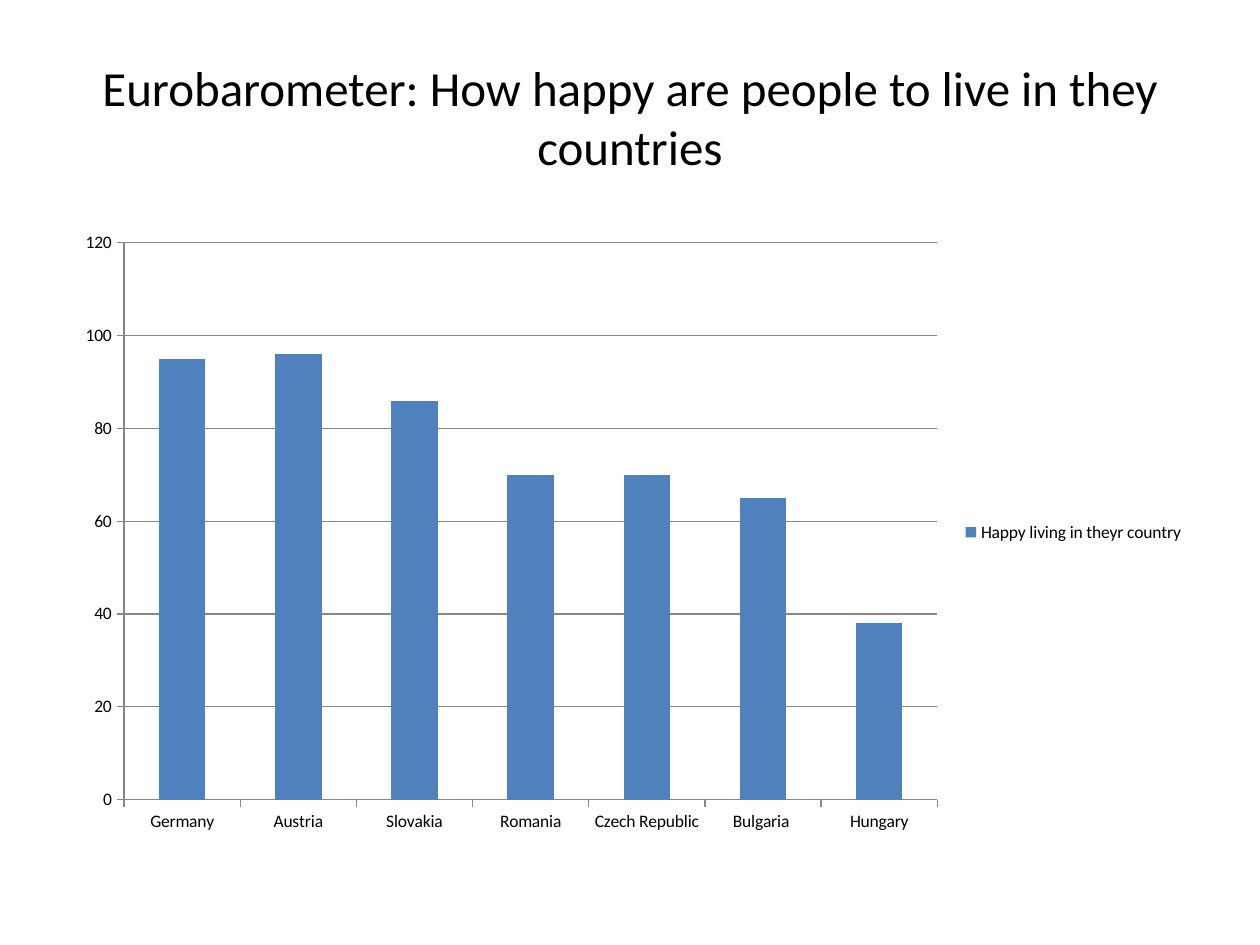
from pptx import Presentation
from pptx.chart.data import CategoryChartData
from pptx.dml.color import RGBColor
from pptx.enum.chart import XL_CHART_TYPE, XL_LEGEND_POSITION, XL_TICK_MARK
from pptx.enum.text import MSO_ANCHOR, MSO_AUTO_SIZE, PP_ALIGN
from pptx.util import Pt

COLUMNS = XL_CHART_TYPE.COLUMN_CLUSTERED
LEGEND_RIGHT = XL_LEGEND_POSITION.RIGHT
TICK_OUTSIDE = XL_TICK_MARK.OUTSIDE
MIDDLE = MSO_ANCHOR.MIDDLE
NO_AUTOFIT = MSO_AUTO_SIZE.NONE
CENTER = PP_ALIGN.CENTER

FONT = "Calibri"
BLACK = "000000"
GRAY = "878787"
BLUE = "4F81BD"
TITLE_ONLY = 5
LEFT, WIDTH = 36, 648

TITLE = "Eurobarometer: How happy are people to live in they countries"
SERIES_NAME = "Happy living in theyr country"
HAPPINESS = {
    "Germany": 95,
    "Austria": 96,
    "Slovakia": 86,
    "Romania": 70,
    "Czech Republic": 70,
    "Bulgaria ": 65,
    "Hungary": 38,
}


def color(hex_string):
    """Return the colour for a hex string."""
    return RGBColor.from_string(hex_string)


def format_font(font, size):
    """Set the slide's typeface and text colour at the given size."""
    font.name = FONT
    font.size = Pt(size)
    font.bold = False
    font.color.rgb = color(BLACK)


def format_line(line):
    """Make a chart line thin and gray."""
    line.color.rgb = color(GRAY)
    line.width = Pt(0.75)


def set_title(slide, text, top, height):
    """Place and format the title placeholder."""
    title = slide.shapes.title
    title.left, title.top = Pt(LEFT), Pt(top)
    title.width, title.height = Pt(WIDTH), Pt(height)
    frame = title.text_frame
    frame.text = text
    frame.word_wrap = True
    frame.auto_size = NO_AUTOFIT
    frame.vertical_anchor = MIDDLE
    paragraph = frame.paragraphs[0]
    paragraph.alignment = CENTER
    format_font(paragraph.font, 28)


def format_axis(axis, has_gridlines):
    """Style an axis with outside ticks and optional gridlines."""
    axis.major_tick_mark = TICK_OUTSIDE
    axis.has_major_gridlines = has_gridlines
    format_line(axis.format.line)
    if has_gridlines:
        format_line(axis.major_gridlines.format.line)


def add_column_chart(slide, name, values, top, height):
    """Add a single-series column chart with a legend on the right."""
    data = CategoryChartData()
    data.categories = list(values)
    data.add_series(name, list(values.values()))
    chart = slide.shapes.add_chart(
        COLUMNS, Pt(LEFT), Pt(top), Pt(WIDTH), Pt(height), data
    ).chart
    format_font(chart.font, 10)
    chart.has_title = False
    chart.has_legend = True
    chart.legend.position = LEGEND_RIGHT
    chart.legend.include_in_layout = False
    format_axis(chart.category_axis, False)
    format_axis(chart.value_axis, True)
    chart.value_axis.minimum_scale = 0
    chart.value_axis.maximum_scale = 120
    chart.value_axis.major_unit = 20
    plot = chart.plots[0]
    plot.gap_width = 150
    plot.vary_by_categories = False
    fill = plot.series[0].format.fill
    fill.solid()
    fill.fore_color.rgb = color(BLUE)


def main():
    """Build and save the slide."""
    presentation = Presentation()
    presentation.slide_width, presentation.slide_height = Pt(720), Pt(540)
    slide = presentation.slides.add_slide(presentation.slide_layouts[TITLE_ONLY])
    set_title(slide, TITLE, 21.6, 90)
    add_column_chart(slide, SERIES_NAME, HAPPINESS, 126, 356.4)
    presentation.save("out.pptx")


if __name__ == "__main__":
    main()
